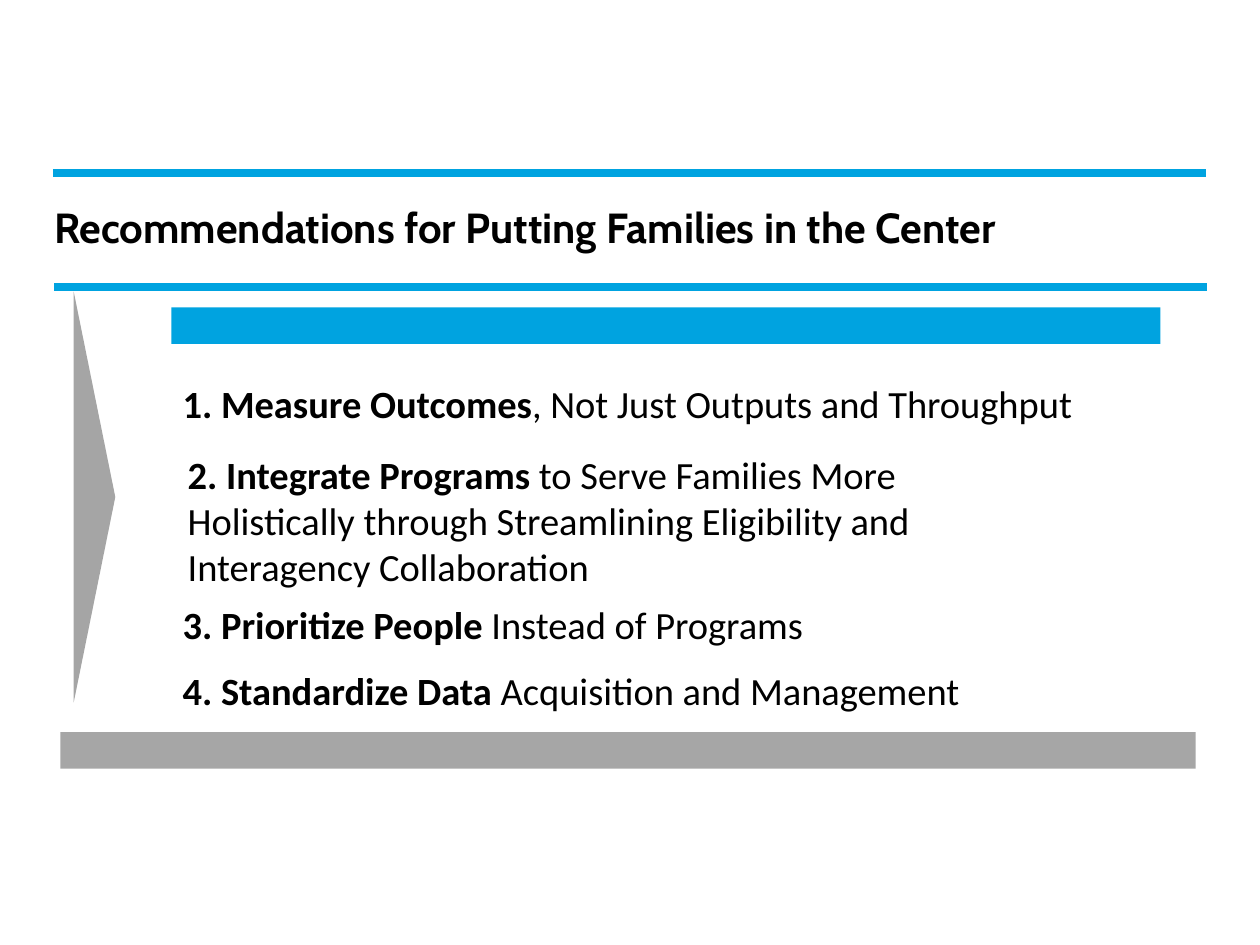
from lxml.etree import SubElement
from pptx import Presentation
from pptx.dml.color import RGBColor
from pptx.enum.shapes import MSO_CONNECTOR as Connector, MSO_SHAPE as Shape
from pptx.oxml.ns import qn
from pptx.util import Inches, Pt

BLUE = RGBColor(0x00, 0xA3, 0xE0)
ARROW_GRAY = RGBColor(0xA5, 0xA5, 0xA5)
BAR_GRAY = RGBColor(0xA6, 0xA6, 0xA6)
BLACK = RGBColor(0x00, 0x00, 0x00)

RECOMMENDATIONS = [
    (1.36, 2.98, 7.77, 0.46, "1. Measure Outcomes",
     ", Not Just Outputs and Throughput"),
    (1.4, 3.54, 7, 1.2, "2. Integrate Programs ",
     "to Serve Families More Holistically through Streamlining "
     "Eligibility and Interagency Collaboration"),
    (1.36, 4.73, 6.76, 0.46, "3. Prioritize People ", "Instead of Programs"),
    (1.36, 5.25, 7.03, 0.46, "4. Standardize Data ",
     "Acquisition and Management"),
]


def add_text(slide, box, runs, font, size, inset_x=0, inset_y=0):
    sp = slide.shapes.add_textbox(*map(Inches, box))
    tf = sp.text_frame
    tf.word_wrap = True
    tf.margin_left = tf.margin_right = Inches(inset_x)
    tf.margin_top = tf.margin_bottom = Inches(inset_y)
    p = tf.paragraphs[0]
    for text, bold in runs:
        r = p.add_run()
        r.text = text
        r.font.name = font
        r.font.size = Pt(size)
        r.font.bold = bold
        r.font.color.rgb = BLACK


def add_rule(slide, left, top, width):
    line = slide.shapes.add_connector(
        Connector.STRAIGHT, Inches(left), Inches(top),
        Inches(left + width), Inches(top))
    line.line.color.rgb = BLUE
    line.line.width = Pt(4.5)
    SubElement(line._element.spPr, qn("a:effectLst"))


def add_block(slide, kind, box, color, rotation=0):
    sp = slide.shapes.add_shape(kind, *map(Inches, box))
    sp.shadow.inherit = False
    sp.fill.solid()
    sp.fill.fore_color.rgb = color
    sp.line.fill.background()
    sp.rotation = rotation


def main():
    prs = Presentation()
    prs.slide_width, prs.slide_height = Inches(10), Inches(7.5)
    slide = prs.slides.add_slide(prs.slide_layouts[6])

    add_text(slide, (0.43, 1.6, 8.91, 0.45),
             [("Recommendations for Putting Families in the Center", True)],
             "Cabin", 24)
    add_rule(slide, 0.43, 2.28, 9.15)
    add_rule(slide, 0.42, 1.37, 9.15)
    add_block(slide, Shape.ISOSCELES_TRIANGLE, (-0.88, 3.78, 3.26, 0.33),
              ARROW_GRAY, 90)
    add_block(slide, Shape.RECTANGLE, (1.36, 2.44, 7.85, 0.29), BLUE)
    for *box, lead, rest in RECOMMENDATIONS:
        add_text(slide, box, [(lead, True), (rest, False)],
                 "Calibri", 22, 0.09, 0.04)
    add_block(slide, Shape.RECTANGLE, (0.48, 5.81, 9.01, 0.29), BAR_GRAY)

    prs.save("out.pptx")


if __name__ == "__main__":
    main()
